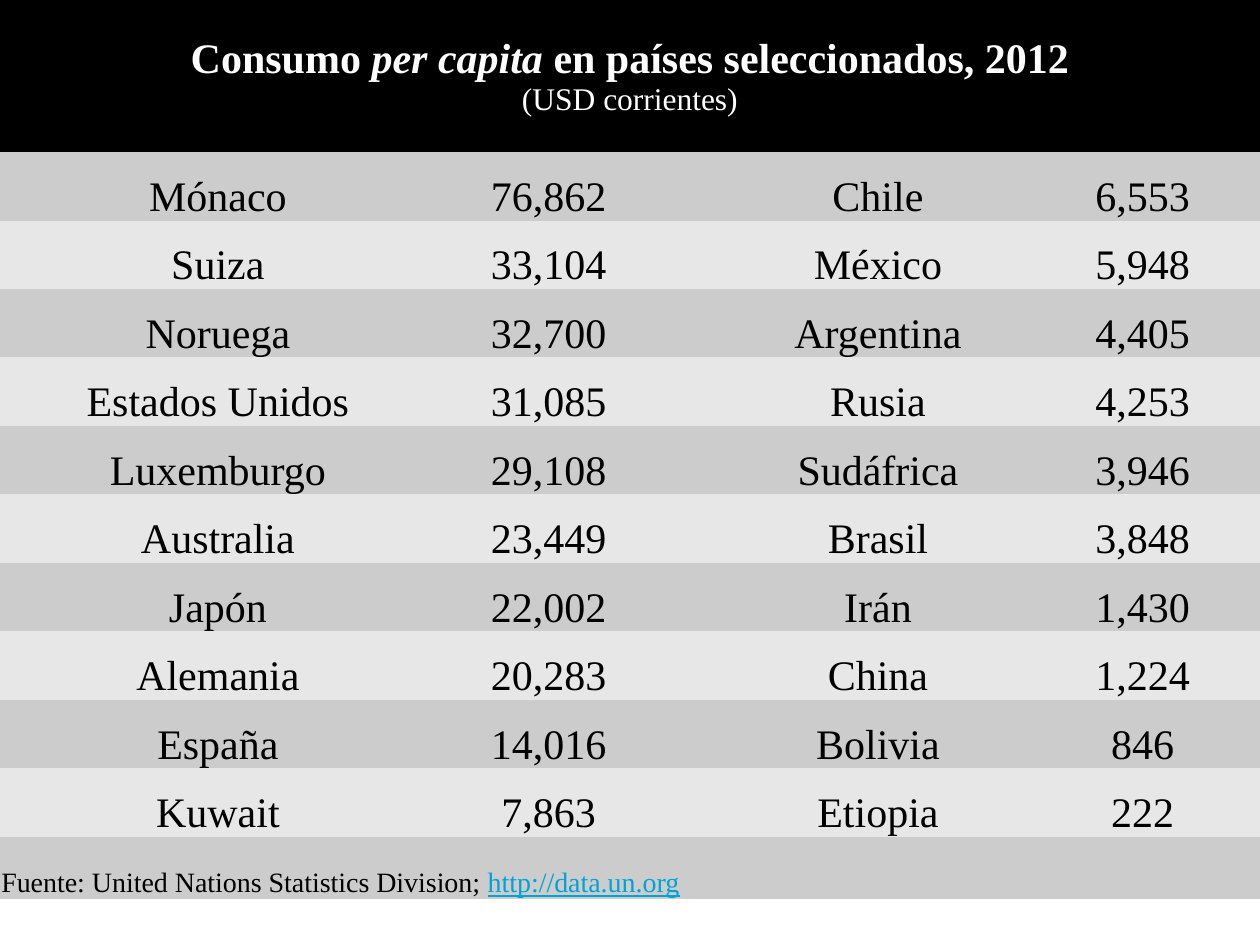
from pptx import Presentation, util as u
from pptx.dml.color import RGBColor
from pptx.enum import text

COLORS = {"header": "000000", "odd": "CCCCCC", "even": "E7E7E7",
          "title": "FFFFFF", "body": "000000", "link": "00A3D6"}
FONT = "Times New Roman"
NO_GRID_STYLE = "{2D5ABB26-0587-4C30-8999-92F81FD0307C}"

heading = [
    [("Consumo ", {"size": 24, "bold": True}),
     ("per capita", {"size": 24, "bold": True, "italic": True}),
     (" en países seleccionados, 2012", {"size": 24, "bold": True})],
    [("(USD corrientes)", {"size": 18})],
]
countries = [
    ("Mónaco", "76,862", "Chile", "6,553"),
    ("Suiza", "33,104", "México", "5,948"),
    ("Noruega", "32,700", "Argentina", "4,405"),
    ("Estados Unidos", "31,085", "Rusia", "4,253"),
    ("Luxemburgo", "29,108", "Sudáfrica", "3,946"),
    ("Australia", "23,449", "Brasil", "3,848"),
    ("Japón", "22,002", "Irán", "1,430"),
    ("Alemania", "20,283", "China", "1,224"),
    ("España", "14,016", "Bolivia", "846"),
    ("Kuwait", "7,863", "Etiopia", "222"),
]
source_note = [[("Fuente: United Nations Statistics Division; ", {"size": 16}),
                ("http://data.un.org", {"size": 16, "underline": True, "color": "link"})]]

column_widths = [249, 129, 39.5, 168.5, 134]
row_heights = [86.9] + [39.12] * len(countries) + [35.5]
country_columns = (0, 1, 3, 4)
cell_format = {"margin_left": u.Pt(0.75), "margin_right": u.Pt(0.75),
               "margin_top": u.Pt(0.75), "margin_bottom": u.Pt(0)}


def rgb(name):
    return RGBColor.from_string(COLORS[name])


def write(cell, paragraphs, color, align, anchor):
    for key, value in cell_format.items():
        setattr(cell, key, value)
    cell.vertical_anchor = anchor
    frame = cell.text_frame
    for number, runs in enumerate(paragraphs):
        line = frame.add_paragraph() if number else frame.paragraphs[0]
        line.alignment = align
        for words, style in runs:
            run = line.add_run()
            run.text = words
            look = {"name": FONT, "bold": False, **style}
            run.font.color.rgb = rgb(look.pop("color", color))
            look["size"] = u.Pt(look["size"])
            for key, value in look.items():
                setattr(run.font, key, value)


deck = Presentation()
deck.slide_width, deck.slide_height = u.Pt(720), u.Pt(540)
slide = deck.slides.add_slide(deck.slide_layouts[6])
frame = slide.shapes.add_table(len(row_heights), len(column_widths), 0, 0,
                               u.Pt(sum(column_widths)), u.Pt(sum(row_heights)))
consumption = frame.table
consumption.first_row = consumption.horz_banding = False
consumption._tbl.tblPr[0].text = NO_GRID_STYLE

for column, width in zip(consumption.columns, column_widths):
    column.width = u.Pt(width)
for index, (row, height) in enumerate(zip(consumption.rows, row_heights)):
    row.height = u.Pt(height)
    shade = "header" if index == 0 else "odd" if index % 2 else "even"
    for cell in row.cells:
        cell.fill.solid()
        cell.fill.fore_color.rgb = rgb(shade)

last = len(row_heights) - 1
for index in (0, last):
    consumption.cell(index, 0).merge(consumption.cell(index, len(column_widths) - 1))

center, left = text.PP_ALIGN.CENTER, text.PP_ALIGN.LEFT
middle, bottom = text.MSO_ANCHOR.MIDDLE, text.MSO_ANCHOR.BOTTOM
write(consumption.cell(0, 0), heading, "title", center, middle)
for index, entries in enumerate(countries, 1):
    for column, entry in zip(country_columns, entries):
        write(consumption.cell(index, column), [[(entry, {"size": 24})]], "body", center, bottom)
write(consumption.cell(last, 0), source_note, "body", left, bottom)

deck.save("out.pptx")
